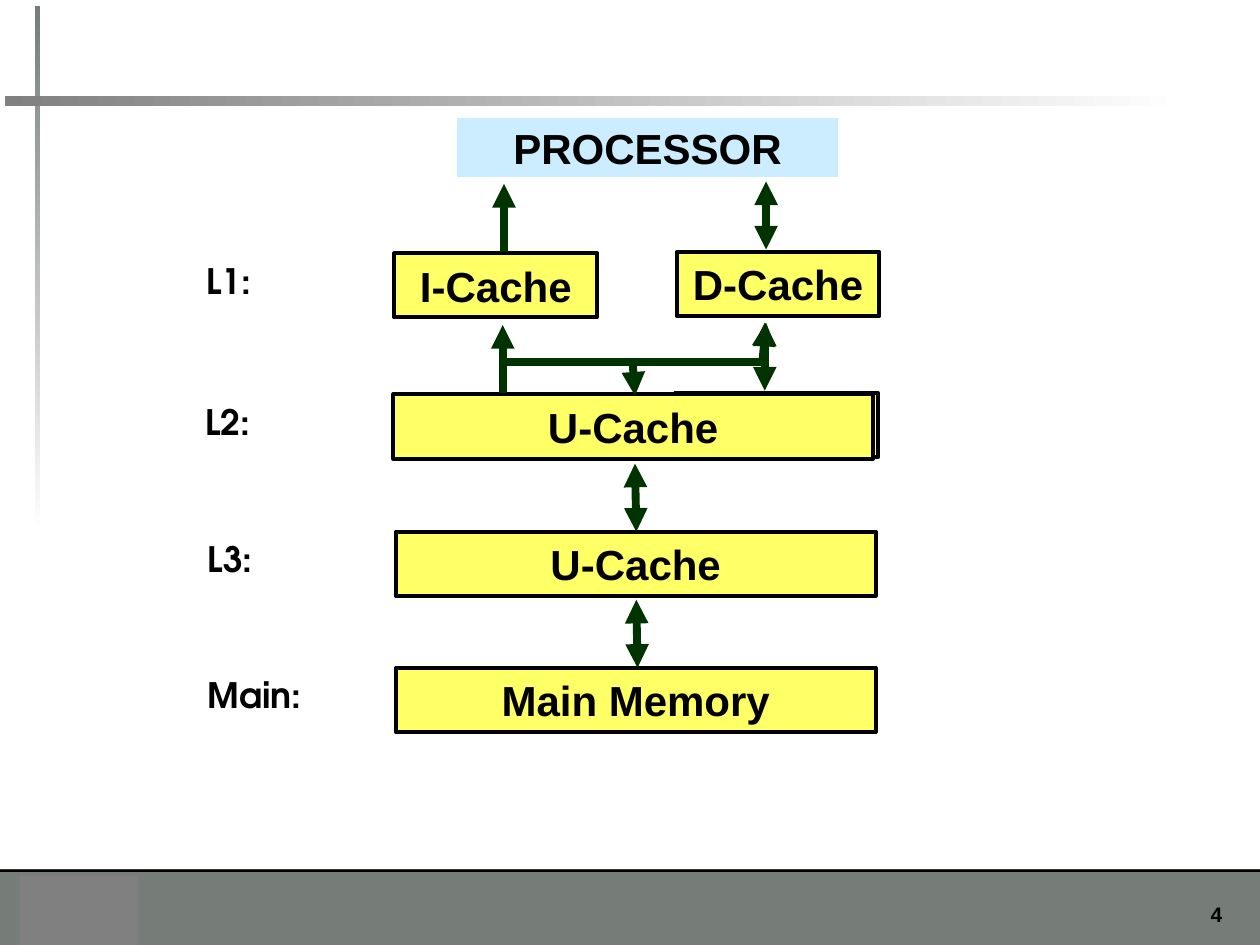
from lxml.etree import SubElement
from pptx import Presentation
from pptx.dml.color import RGBColor
from pptx.enum.shapes import MSO_CONNECTOR, MSO_SHAPE
from pptx.enum.text import MSO_ANCHOR as ANCHOR, PP_ALIGN as ALIGN
from pptx.oxml.ns import qn
from pptx.util import Inches, Pt

BLACK = RGBColor(0x00, 0x00, 0x00)
WHITE = RGBColor(0xFF, 0xFF, 0xFF)
SLATE = RGBColor(0x76, 0x7D, 0x79)
GRAY = RGBColor(0x80, 0x80, 0x80)
YELLOW = RGBColor(0xFF, 0xFF, 0x66)
SKY = RGBColor(0xCC, 0xEC, 0xFF)
GREEN = RGBColor(0x00, 0x33, 0x00)

BOX_H = 0.51
HALF_W = 1.61
FULL_W = 3.81


def write(s, text, size, font, align):
    tf = s.text_frame
    tf.word_wrap = True
    tf.text = text
    p = tf.paragraphs[0]
    p.alignment = align
    f = p.runs[0].font
    f.name, f.size, f.bold = font, Pt(size), True
    f.color.rgb = BLACK


def add_rect(slide, x, y, w, h):
    s = slide.shapes.add_shape(
        MSO_SHAPE.RECTANGLE, Inches(x), Inches(y), Inches(w), Inches(h))
    s.shadow.inherit = False
    s.line.fill.background()
    return s


def add_bar(slide, x, y, w, h, color):
    s = add_rect(slide, x, y, w, h)
    s.fill.solid()
    s.fill.fore_color.rgb = color
    return s


def add_fading_bar(slide, x, y, w, h, color, angle):
    s = add_rect(slide, x, y, w, h)
    s.fill.gradient()
    s.fill.gradient_angle = angle
    for stop, rgb, position in zip(s.fill.gradient_stops, (color, WHITE), (0, 1)):
        stop.color.rgb = rgb
        stop.position = position


def add_box(slide, x, y, w, text="", h=BOX_H, fill=YELLOW, line=BLACK):
    s = add_bar(slide, x, y, w, h, fill)
    s.line.color.rgb = line
    s.line.width = Pt(2.25)
    if text:
        s.text_frame.vertical_anchor = ANCHOR.MIDDLE
        write(s, text, 24, "Arial", ALIGN.CENTER)


def add_text(slide, x, y, w, h, text, size, font, align=ALIGN.LEFT):
    s = slide.shapes.add_textbox(Inches(x), Inches(y), Inches(w), Inches(h))
    write(s, text, size, font, align)


def add_arrow(slide, x1, y1, x2, y2, ends=()):
    s = slide.shapes.add_connector(
        MSO_CONNECTOR.STRAIGHT, Inches(x1), Inches(y1), Inches(x2), Inches(y2))
    s.line.color.rgb = GREEN
    s.line.width = Pt(4.5)
    ln = s.line._get_or_add_ln()
    for end in ends:
        SubElement(ln, qn(f"a:{end}End"), type="triangle")
    SubElement(s._element.spPr, qn("a:effectLst"))


def add_frame(slide):
    add_bar(slide, 0, 6.9, 10, 0.6, SLATE)
    add_bar(slide, 0, 6.9, 10, 0.02, BLACK)
    add_text(slide, 9.17, 7.11, 0.63, 0.3, "4", 12, "Arial", ALIGN.RIGHT)
    add_fading_bar(slide, 0.28, 0.05, 0.04, 4.17, SLATE, 270)
    add_fading_bar(slide, 0.04, 0.76, 9.37, 0.08, GRAY, 0)
    add_bar(slide, 0.16, 6.95, 0.94, 0.55, GRAY)


def add_boxes(slide):
    add_box(slide, 3.61, 0.92, 3.06, "PROCESSOR", 0.5, SKY, WHITE)
    add_box(slide, 3.13, 2.01, HALF_W, "I-Cache")
    add_box(slide, 5.37, 2, HALF_W, "D-Cache")
    add_box(slide, 5.36, 3.12, HALF_W)


def add_arrows(slide):
    both = ("head", "tail")
    add_arrow(slide, 4, 2, 4, 1.46, ["tail"])
    add_arrow(slide, 6.08, 1.98, 6.08, 1.44, both)
    add_arrow(slide, 3.99, 3.12, 3.99, 2.58, ["tail"])
    add_arrow(slide, 6.07, 3.1, 6.07, 2.56, both)
    add_arrow(slide, 6.05, 2.88, 6.08, 2.56, ["tail"])
    add_arrow(slide, 3.99, 2.87, 6.1, 2.87)
    add_arrow(slide, 5.04, 3.14, 5.02, 2.86, ["head"])
    add_arrow(slide, 5.05, 4.22, 5.04, 3.68, both)
    add_arrow(slide, 5.06, 5.3, 5.05, 4.76, both)


def add_levels(slide):
    levels = [
        ("L1:", 1.54, 2.01, None),
        ("L2:", 1.53, 3.13, "U-Cache"),
        ("L3:", 1.55, 4.22, "U-Cache"),
        ("Main:", 1.55, 5.3, "Main Memory"),
    ]
    for label, x, y, memory in levels:
        add_text(slide, x, y, 1.58, 0.44, label, 20, "TeX Gyre Adventor")
        if memory:
            add_box(slide, x + 1.59, y, FULL_W, memory)


def main():
    prs = Presentation()
    prs.slide_width, prs.slide_height = Inches(10), Inches(7.5)
    slide = prs.slides.add_slide(prs.slide_layouts[6])
    add_frame(slide)
    add_boxes(slide)
    add_levels(slide)
    add_arrows(slide)
    prs.save("out.pptx")


if __name__ == "__main__":
    main()
